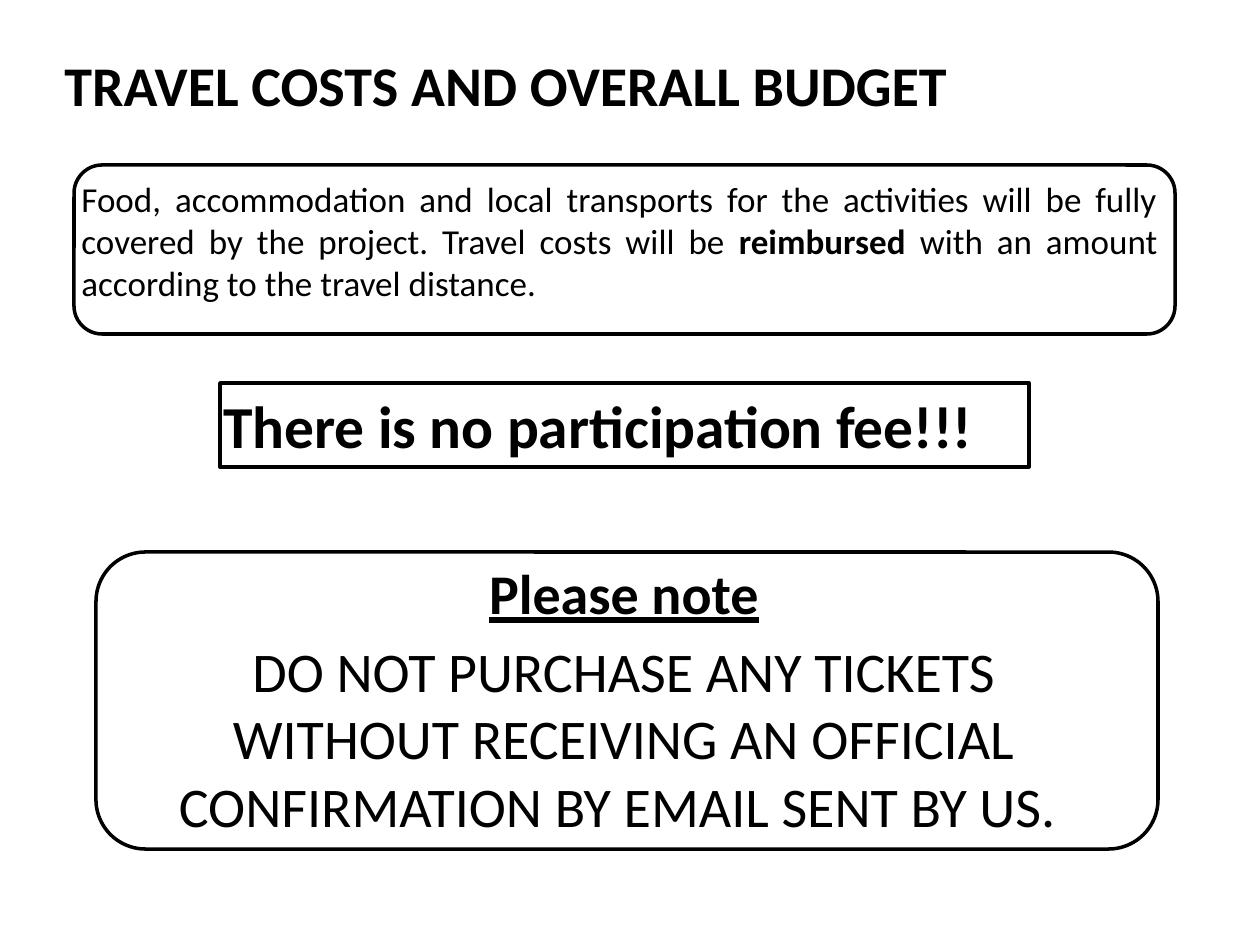
from dataclasses import dataclass, field

from pptx import Presentation
from pptx.dml.color import RGBColor
from pptx.enum.shapes import MSO_SHAPE
from pptx.enum.text import PP_ALIGN
from pptx.util import Emu, Pt

EMU_PER_PX = 914400 / 126
ROUNDED, RECTANGLE = MSO_SHAPE.ROUNDED_RECTANGLE, MSO_SHAPE.RECTANGLE
LEFT, CENTER, JUSTIFY = PP_ALIGN.LEFT, PP_ALIGN.CENTER, PP_ALIGN.JUSTIFY
BLACK, WHITE = "000000", "FFFFFF"
BLANK_LAYOUT = 6


@dataclass
class Frame:
    preset: int
    bounds: tuple[int, int, int, int]


@dataclass
class Span:
    text: str
    style: dict = field(default_factory=dict)


@dataclass
class Para:
    spans: list[Span]
    space_before: float = 0


@dataclass
class TextBlock:
    bounds: tuple[int, int, int, int]
    size: int
    alignment: int
    paras: list[Para]


BOLD = {"bold": True}

FRAMES = [
    Frame(ROUNDED, (74, 165, 1101, 169)),
    Frame(ROUNDED, (96, 552, 1062, 297)),
    Frame(RECTANGLE, (220, 383, 809, 84)),
]

TEXT_BLOCKS = [
    TextBlock((123, 552, 1002, 297), 32, CENTER, [
        Para([Span("Please note", {"bold": True, "underline": True})]),
        Para([Span("DO NOT PURCHASE ANY TICKETS WITHOUT RECEIVING AN OFFICIAL "
                   "CONFIRMATION BY EMAIL SENT BY US. ")], space_before=6.4),
    ]),
    TextBlock((52, 44, 1071, 81), 32, LEFT, [
        Para([Span("TRAVEL COSTS AND OVERALL BUDGET", BOLD)]),
    ]),
    TextBlock((69, 171, 1101, 178), 20, JUSTIFY, [
        Para([
            Span("Food, accommodation and local transports for the activities will be "
                 "fully covered by the project. Travel costs will be "),
            Span("reimbursed ", BOLD),
            Span("with an amount according to the travel distance. "),
        ]),
    ]),
    TextBlock((200, 383, 809, 84), 34, CENTER, [
        Para([Span("There is no participation fee!!! ", BOLD)]),
    ]),
]


def px(length: int) -> Emu:
    return Emu(round(length * EMU_PER_PX))


def color(code: str) -> RGBColor:
    return RGBColor.from_string(code)


def draw_frame(page, frame: Frame) -> None:
    shape = page.shapes.add_shape(frame.preset, *map(px, frame.bounds))
    shape.shadow.inherit = False
    shape.fill.solid()
    shape.fill.fore_color.rgb = color(WHITE)
    shape.line.color.rgb = color(BLACK)
    shape.line.width = Pt(2)


def draw_text(page, block: TextBlock) -> None:
    text_frame = page.shapes.add_textbox(*map(px, block.bounds)).text_frame
    text_frame.word_wrap = True
    for index, para in enumerate(block.paras):
        paragraph = text_frame.add_paragraph() if index else text_frame.paragraphs[0]
        paragraph.alignment = block.alignment
        if para.space_before:
            paragraph.space_before = Pt(para.space_before)
        for span in para.spans:
            run = paragraph.add_run()
            run.text = span.text
            style = {"name": "Calibri", "size": Pt(block.size), **span.style}
            for attribute, value in style.items():
                setattr(run.font, attribute, value)
            run.font.color.rgb = color(BLACK)


def main() -> None:
    deck = Presentation()
    deck.slide_width, deck.slide_height = px(1260), px(945)
    page = deck.slides.add_slide(deck.slide_layouts[BLANK_LAYOUT])
    for frame in FRAMES:
        draw_frame(page, frame)
    for block in TEXT_BLOCKS:
        draw_text(page, block)
    deck.save("out.pptx")


if __name__ == "__main__":
    main()
